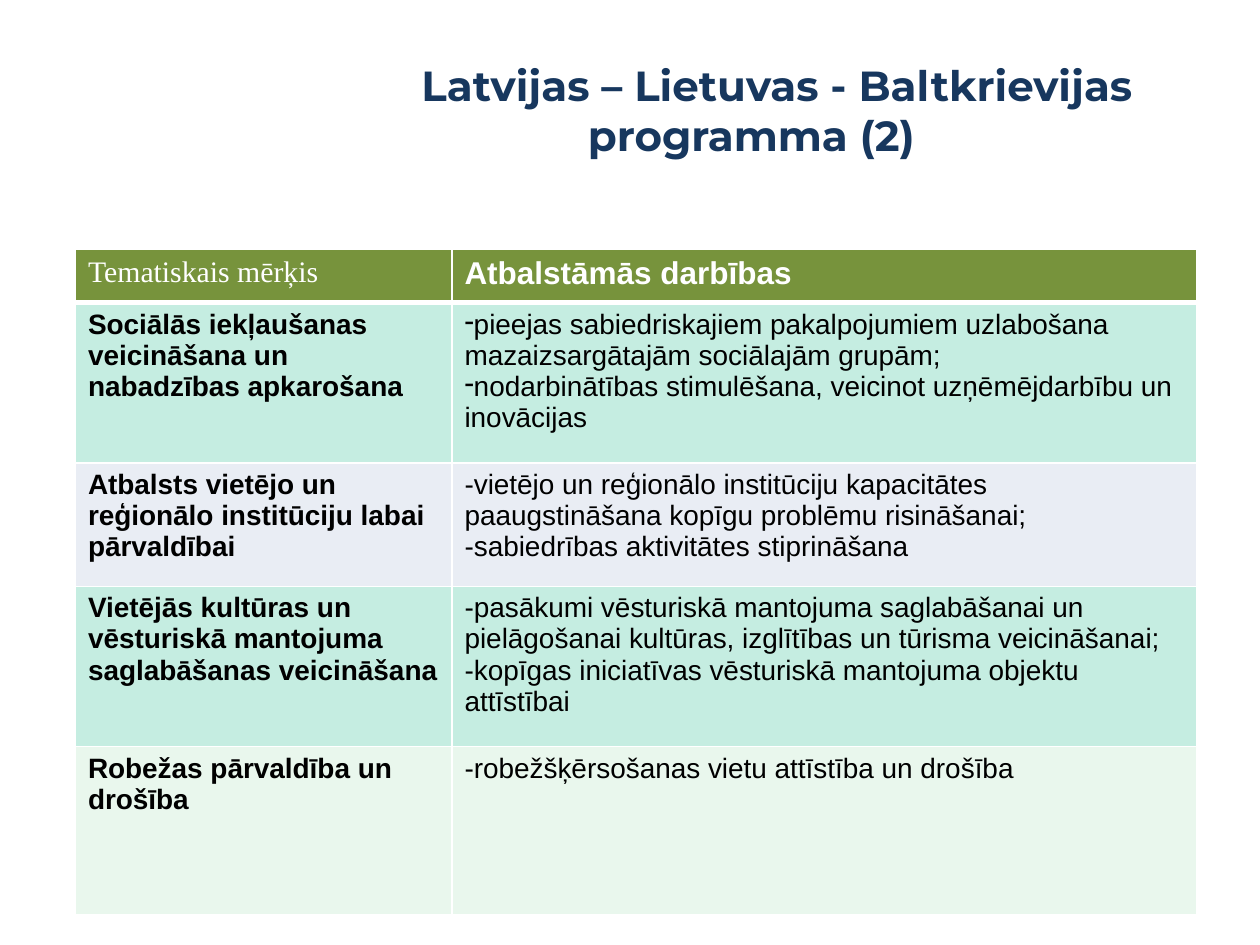
import pptx
import pptx.dml.color
import pptx.enum.text
import pptx.oxml
import pptx.oxml.ns
import pptx.util
from pptx.util import Cm

TITLE = "Latvijas – Lietuvas - Baltkrievijas programma (2)\t"
HEADERS = ["Tematiskais mērķis", "Atbalstāmās darbības"]
GOALS = [
    {"goal": "Sociālās iekļaušanas veicināšana un nabadzības apkarošana",
     "actions": ["pieejas sabiedriskajiem pakalpojumiem uzlabošana mazaizsargātajām sociālajām grupām;",
                 "nodarbinātības stimulēšana, veicinot uzņēmējdarbību un inovācijas"],
     "bullet": "-", "fill": "mint", "height": 3.23},
    {"goal": "Atbalsts vietējo un reģionālo institūciju labai pārvaldībai",
     "actions": ["-vietējo un reģionālo institūciju kapacitātes paaugstināšana kopīgu problēmu risināšanai;",
                 "-sabiedrības aktivitātes stiprināšana"],
     "bullet": None, "fill": "lavender", "height": 2.49},
    {"goal": "Vietējās kultūras un vēsturiskā mantojuma saglabāšanas veicināšana",
     "actions": ["-pasākumi vēsturiskā mantojuma saglabāšanai un pielāgošanai kultūras, "
                 "izglītības un tūrisma veicināšanai;",
                 "-kopīgas iniciatīvas vēsturiskā mantojuma objektu attīstībai"],
     "bullet": None, "fill": "mint", "height": 3.23},
    {"goal": "Robežas pārvaldība un drošība",
     "actions": ["-robežšķērsošanas vietu attīstība un drošība"],
     "bullet": None, "fill": "pale", "height": 3.4},
]
THEME = {
    "navy": "17375E", "olive": "77933C", "mint": "C5EDE1", "lavender": "E9EDF4",
    "pale": "E9F7ED", "white": "FFFFFF", "black": "000000",
    "title_size": 24, "header_size": 18, "header_small": 17, "body_size": 16,
    "title_font": "Montserrat", "body_font": "Arial", "serif_font": "Times New Roman",
    "border": 1, "header_border": 3,
}
HEADER_HEIGHT = 1.07
COLUMN_WIDTHS = [7.59, 15.01]
TABLE_LEFT, TABLE_TOP = 1.52, 5.03


def color(name):
    return pptx.dml.color.RGBColor.from_string(THEME[name])


def write_text(frame, lines, size="body_size", font="body_font", ink="black",
               bold=False, align=None, bullet=None):
    for index, line in enumerate(lines):
        paragraph = frame.paragraphs[0] if index == 0 else frame.add_paragraph()
        if bullet:
            properties = paragraph._p.get_or_add_pPr()
            properties.set("marL", "0")
            properties.set("indent", "0")
            mark = pptx.oxml.parse_xml(
                f'<a:buChar {pptx.oxml.ns.nsdecls("a")} char="{bullet}"/>')
            properties.append(mark)
        paragraph.alignment = align
        run = paragraph.add_run()
        run.text = line
        run.font.size = pptx.util.Pt(THEME[size])
        run.font.name = THEME[font]
        run.font.bold = bold
        run.font.color.rgb = color(ink)


def style_cell(cell, fill, bottom="border"):
    cell.fill.solid()
    cell.fill.fore_color.rgb = color(fill)
    properties = cell._tc.get_or_add_tcPr()
    for index, side in enumerate("LRTB"):
        width = pptx.util.Pt(THEME[bottom if side == "B" else "border"])
        properties.insert(index, pptx.oxml.parse_xml(
            f'<a:ln{side} {pptx.oxml.ns.nsdecls("a")} w="{width}"><a:solidFill>'
            f'<a:srgbClr val="{THEME["white"]}"/></a:solidFill></a:ln{side}>'))


def add_title(slide):
    title = slide.shapes.title
    title.left, title.top, title.width, title.height = Cm(7.19), Cm(1.07), Cm(16.94), Cm(2.87)
    frame = title.text_frame
    frame.word_wrap = True
    frame.auto_size = pptx.enum.text.MSO_AUTO_SIZE.NONE
    frame.vertical_anchor = pptx.enum.text.MSO_ANCHOR.TOP
    write_text(frame, [TITLE], size="title_size", font="title_font", ink="navy",
               bold=True, align=pptx.enum.text.PP_ALIGN.CENTER)


def add_goals_table(slide):
    heights = [HEADER_HEIGHT] + [row["height"] for row in GOALS]
    table = slide.shapes.add_table(
        len(heights), len(COLUMN_WIDTHS), Cm(TABLE_LEFT), Cm(TABLE_TOP),
        Cm(sum(COLUMN_WIDTHS)), Cm(sum(heights))).table
    table.first_row = False
    table.horz_banding = False
    for column, width in zip(table.columns, COLUMN_WIDTHS):
        column.width = Cm(width)
    for row, height in zip(table.rows, heights):
        row.height = Cm(height)

    header_formats = [{"size": "header_small", "font": "serif_font"},
                      {"size": "header_size", "bold": True}]
    for index, (header, text_format) in enumerate(zip(HEADERS, header_formats)):
        cell = table.cell(0, index)
        style_cell(cell, "olive", bottom="header_border")
        write_text(cell.text_frame, [header], ink="white", **text_format)

    for index, row in enumerate(GOALS, start=1):
        goal, actions = table.cell(index, 0), table.cell(index, 1)
        for cell in (goal, actions):
            style_cell(cell, row["fill"])
        write_text(goal.text_frame, [row["goal"]], bold=True)
        write_text(actions.text_frame, row["actions"], bullet=row["bullet"])


def main():
    presentation = pptx.Presentation()
    presentation.slide_width, presentation.slide_height = Cm(25.4), Cm(19.05)
    slide = presentation.slides.add_slide(presentation.slide_layouts.get_by_name("Title Only"))
    add_title(slide)
    add_goals_table(slide)
    presentation.save("out.pptx")


if __name__ == "__main__":
    main()
